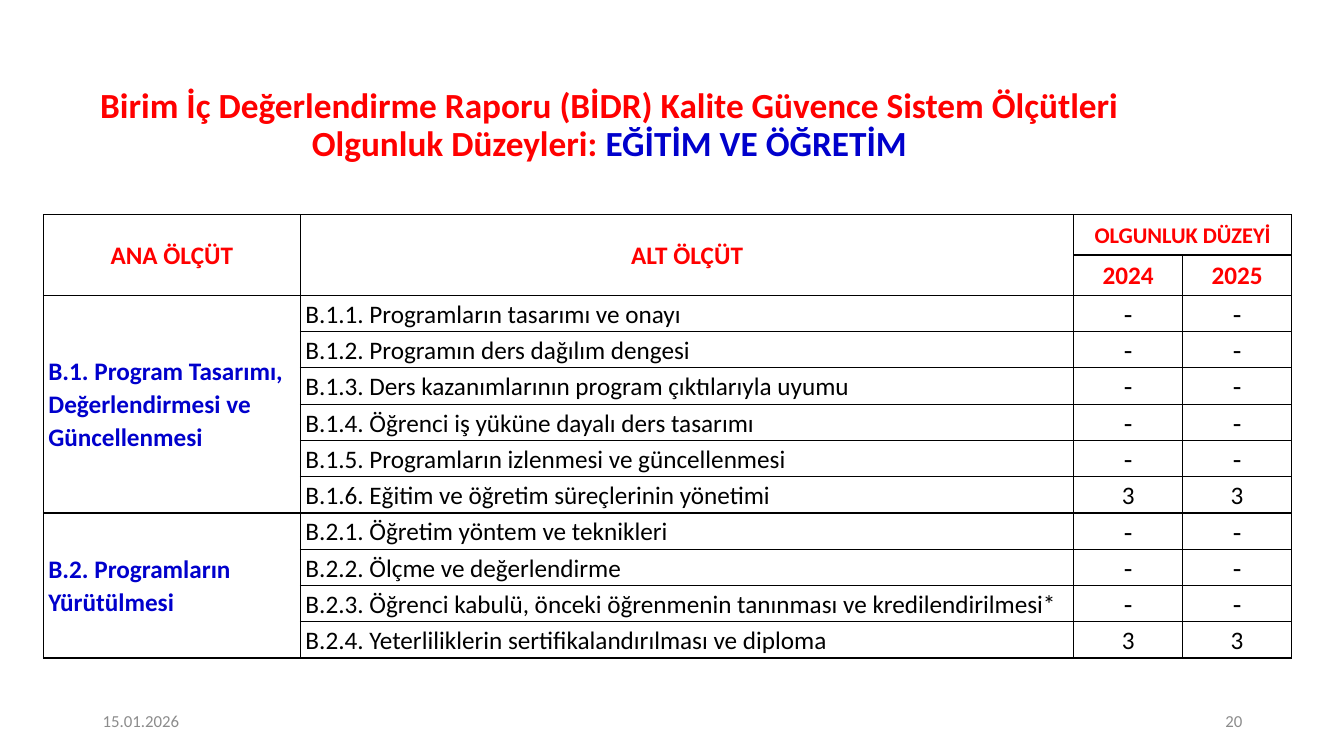
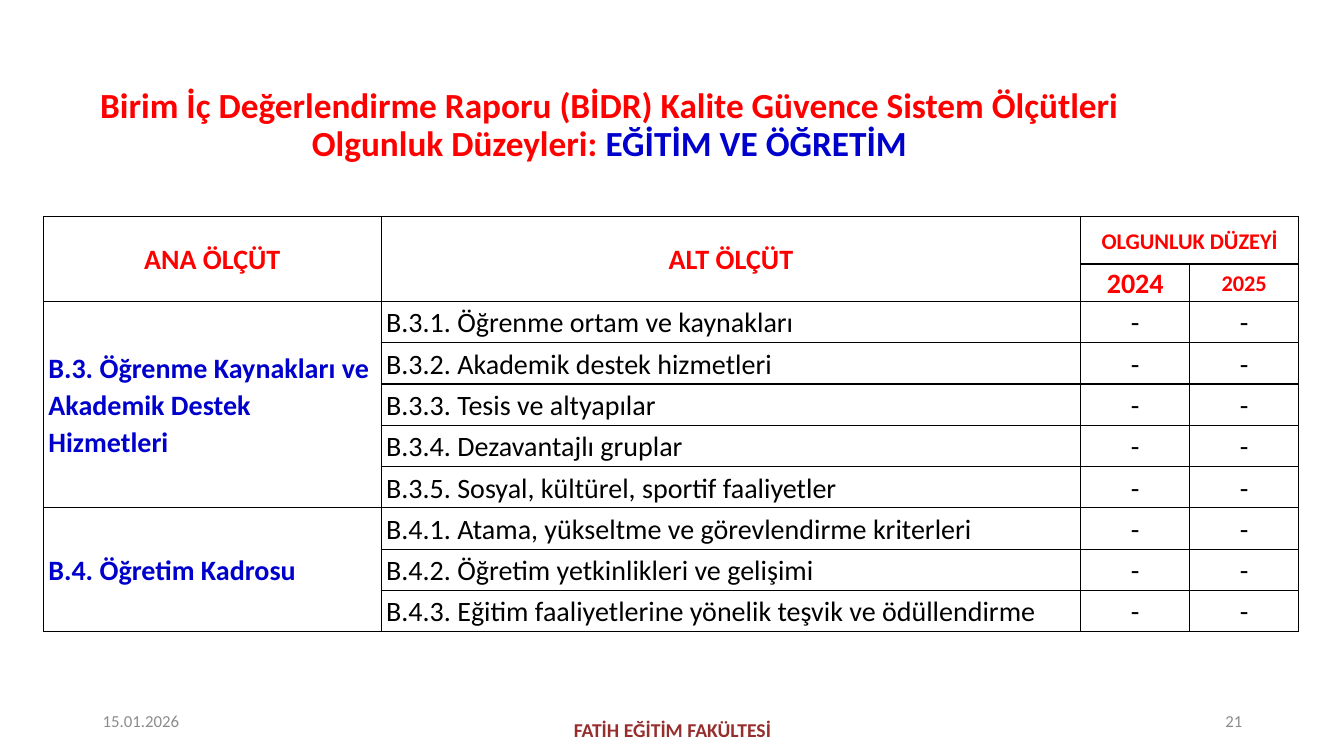
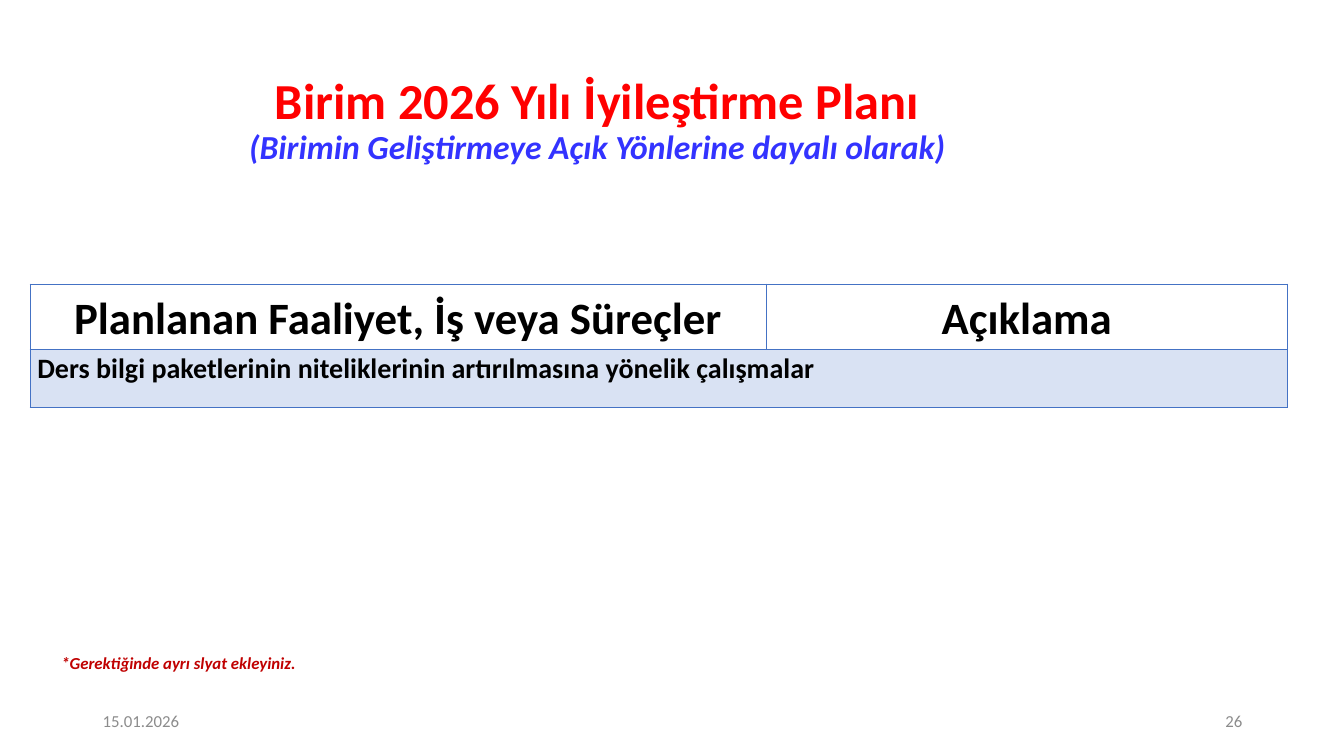
"""Build three slides on faculty quality criteria and the improvement plan."""
import lxml.etree
import pptx
import pptx.dml.color
import pptx.enum.text
import pptx.oxml.ns
import pptx.util

Inches = pptx.util.Inches
RGBColor = pptx.dml.color.RGBColor
ALIGN = pptx.enum.text.PP_ALIGN
ANCHOR = pptx.enum.text.MSO_ANCHOR

FONT = "Calibri"
RED = RGBColor(0xFF, 0x00, 0x00)
BLUE = RGBColor(0x00, 0x00, 0xCC)
SUBTITLE_BLUE = RGBColor(0x33, 0x33, 0xFF)
BLACK = RGBColor(0x00, 0x00, 0x00)
GREY = RGBColor(0x8C, 0x8C, 0x8C)
MAROON = RGBColor(0x96, 0x2E, 0x2E)
NOTE_RED = RGBColor(0xC0, 0x00, 0x00)
PLAN_BORDER = RGBColor(0x44, 0x72, 0xC4)
PLAN_FILL = RGBColor(0xD9, 0xE2, 0xF3)

DATE = "15.01.2026"
FACULTY = "FATİH EĞİTİM FAKÜLTESİ"
NOTE = "*Gerektiğinde ayrı slyat ekleyiniz."
CRITERIA_TITLE = [
    ("Birim İç Değerlendirme Raporu (BİDR) Kalite Güvence Sistem Ölçütleri "
     "Olgunluk Düzeyleri: ", 25.2, RED, False),
    ("EĞİTİM VE ÖĞRETİM", 25.2, BLUE, False),
]
PLAN_TITLE = [
    ("Birim 2026 Yılı İyileştirme Planı\v", 36, RED, False),
    ("(Birimin Geliştirmeye Açık Yönlerine dayalı olarak)", 24, SUBTITLE_BLUE, True),
]
PLAN_HEADERS = ["Planlanan Faaliyet, İş veya Süreçler", "Açıklama"]
PLANNED_WORK = "Ders bilgi paketlerinin niteliklerinin artırılmasına yönelik çalışmalar"

CRITERIA_SLIDES = [
    {
        "number": "20",
        "top": 2.13,
        "columns": [2.55, 7.67, 1.08, 1.08],
        "header_rows": [0.4, 0.4],
        "row": 0.36,
        "size": 18,
        "years": [("2024", 18), ("2025", 18)],
        "faculty": None,
        "groups": [
            ("B.1. Program Tasarımı, Değerlendirmesi ve Güncellenmesi", [
                ("B.1.1. Programların tasarımı ve onayı", "-", "-"),
                ("B.1.2. Programın ders dağılım dengesi", "-", "-"),
                ("B.1.3. Ders kazanımlarının program çıktılarıyla uyumu", "-", "-"),
                ("B.1.4. Öğrenci iş yüküne dayalı ders tasarımı", "-", "-"),
                ("B.1.5. Programların izlenmesi ve güncellenmesi", "-", "-"),
                ("B.1.6. Eğitim ve öğretim süreçlerinin yönetimi", "3", "3"),
            ]),
            ("B.2. Programların Yürütülmesi", [
                ("B.2.1. Öğretim yöntem ve teknikleri", "-", "-"),
                ("B.2.2. Ölçme ve değerlendirme", "-", "-"),
                ("B.2.3. Öğrenci kabulü, önceki öğrenmenin tanınması ve "
                 "kredilendirilmesi*", "-", "-"),
                ("B.2.4. Yeterliliklerin sertifikalandırılması ve diploma", "3", "3"),
            ]),
        ],
    },
    {
        "number": "21",
        "top": 2.15,
        "columns": [3.35, 6.94, 1.08, 1.08],
        "header_rows": [0.47, 0.37],
        "row": 0.41,
        "size": 20,
        "years": [("2024", 20), ("2025", 16)],
        "faculty": FACULTY,
        "groups": [
            ("B.3. Öğrenme Kaynakları ve Akademik Destek Hizmetleri", [
                ("B.3.1. Öğrenme ortam ve kaynakları", "-", "-"),
                ("B.3.2. Akademik destek hizmetleri", "-", "-"),
                ("B.3.3. Tesis ve altyapılar", "-", "-"),
                ("B.3.4. Dezavantajlı gruplar", "-", "-"),
                ("B.3.5. Sosyal, kültürel, sportif faaliyetler", "-", "-"),
            ]),
            ("B.4. Öğretim Kadrosu", [
                ("B.4.1. Atama, yükseltme ve görevlendirme kriterleri", "-", "-"),
                ("B.4.2. Öğretim yetkinlikleri ve gelişimi", "-", "-"),
                ("B.4.3. Eğitim faaliyetlerine yönelik teşvik ve ödüllendirme", "-", "-"),
            ]),
        ],
    },
]


def style_font(font, size, color, bold=False, italic=False):
    """Set the shared typeface with the given size, colour and emphasis."""
    font.name = FONT
    font.size = pptx.util.Pt(size)
    font.color.rgb = color
    font.bold = bold
    font.italic = italic


def add_label(slide, box, text, size, color, align=ALIGN.LEFT, anchor=ANCHOR.MIDDLE,
              bold=False, italic=False):
    """Add one line of text in a wrapping box."""
    frame = slide.shapes.add_textbox(*map(Inches, box)).text_frame
    frame.word_wrap = True
    frame.vertical_anchor = anchor
    frame.text = text
    frame.paragraphs[0].alignment = align
    style_font(frame.paragraphs[0].runs[0].font, size, color, bold, italic)


def add_base_slide(deck, title_box, title_parts, number):
    """Add a slide with its title, date and page number."""
    slide = deck.slides.add_slide(deck.slide_layouts[5])
    title = slide.shapes.title
    title.left, title.top, title.width, title.height = map(Inches, title_box)
    frame = title.text_frame
    frame.word_wrap = True
    frame.auto_size = pptx.enum.text.MSO_AUTO_SIZE.NONE
    frame.vertical_anchor = ANCHOR.MIDDLE
    heading = frame.paragraphs[0]
    heading.text = "".join(part[0] for part in title_parts)
    heading.alignment = ALIGN.CENTER
    heading.line_spacing = 0.9
    if len(heading.runs) < len(title_parts):
        heading.runs[0].text = title_parts[0][0]
        heading.add_run().text = title_parts[1][0]
    for run, (_, size, color, italic) in zip(heading.runs, title_parts):
        style_font(run.font, size, color, True, italic)
    add_label(slide, (0.92, 6.95, 3, 0.4), DATE, 12, GREY)
    add_label(slide, (9.42, 6.95, 3, 0.4), number, 12, GREY, ALIGN.RIGHT)
    return slide


def add_grid(slide, left, top, columns, rows, border):
    """Add an unfilled table with thin borders around every cell."""
    table = slide.shapes.add_table(
        len(rows), len(columns), Inches(left), Inches(top),
        Inches(sum(columns)), Inches(sum(rows))).table
    table.first_row = table.horz_banding = False
    for column, width in zip(table.columns, columns):
        column.width = Inches(width)
    for row, height in zip(table.rows, rows):
        row.height = Inches(height)
    qn = pptx.oxml.ns.qn
    for cell in table.iter_cells():
        properties = cell._tc.get_or_add_tcPr()
        for side in ("a:lnL", "a:lnR", "a:lnT", "a:lnB"):
            line = lxml.etree.SubElement(properties, qn(side), w=str(pptx.util.Pt(1)))
            fill = lxml.etree.SubElement(line, qn("a:solidFill"))
            lxml.etree.SubElement(fill, qn("a:srgbClr"), val=str(border))
        cell.fill.background()
    return table


def fill_cell(cell, text, size, color, align=ALIGN.CENTER, bold=True, inset=0.05,
              anchor=ANCHOR.MIDDLE):
    """Write and format the text of one cell."""
    cell.margin_left = cell.margin_right = Inches(inset)
    cell.margin_top = cell.margin_bottom = 0
    cell.vertical_anchor = anchor
    cell.text = text
    paragraph = cell.text_frame.paragraphs[0]
    paragraph.alignment = align
    paragraph.line_spacing = 1.07
    style_font(paragraph.runs[0].font, size, color, bold)


def add_criteria_slide(deck, content):
    """Add one slide of criteria with their maturity levels."""
    slide = add_base_slide(deck, (0.43, 0.9, 11.23, 0.7), CRITERIA_TITLE, content["number"])
    if content["faculty"]:
        add_label(slide, (4.42, 7.04, 4.5, 0.4), content["faculty"], 14, MAROON,
                  ALIGN.CENTER, bold=True)
    size = content["size"]
    count = sum(len(criteria) for _, criteria in content["groups"])
    table = add_grid(slide, 0.43, content["top"], content["columns"],
                     content["header_rows"] + [content["row"]] * count, BLACK)
    for column, header in enumerate(["ANA ÖLÇÜT", "ALT ÖLÇÜT"]):
        table.cell(0, column).merge(table.cell(1, column))
        fill_cell(table.cell(0, column), header, size, RED)
    table.cell(0, 2).merge(table.cell(0, 3))
    fill_cell(table.cell(0, 2), "OLGUNLUK DÜZEYİ", 16, RED)
    for column, (year, year_size) in enumerate(content["years"], 2):
        fill_cell(table.cell(1, column), year, year_size, RED)
    row = 2
    for group, criteria in content["groups"]:
        table.cell(row, 0).merge(table.cell(row + len(criteria) - 1, 0))
        fill_cell(table.cell(row, 0), group, size, BLUE, ALIGN.LEFT)
        for criterion, *levels in criteria:
            fill_cell(table.cell(row, 1), criterion, size, BLACK, ALIGN.JUSTIFY, False)
            for column, level in enumerate(levels, 2):
                level_size = 20 if level == "-" else size
                fill_cell(table.cell(row, column), level, level_size, BLACK, bold=False)
            row += 1


def add_plan_slide(deck):
    """Add the improvement plan slide."""
    slide = add_base_slide(deck, (0.3, 0.78, 11.25, 0.84), PLAN_TITLE, "26")
    table = add_grid(slide, 0.3, 2.82, [7.3, 5.17], [0.65, 0.57], PLAN_BORDER)
    for column, header in enumerate(PLAN_HEADERS):
        fill_cell(table.cell(0, column), header, 32, BLACK, inset=0.07)
    work = table.cell(1, 0)
    work.merge(table.cell(1, 1))
    fill_cell(work, PLANNED_WORK, 20, BLACK, ALIGN.LEFT, inset=0.07, anchor=ANCHOR.TOP)
    work.fill.solid()
    work.fill.fore_color.rgb = PLAN_FILL
    add_label(slide, (0.51, 6.43, 5, 0.3), NOTE, 12, NOTE_RED, anchor=ANCHOR.TOP,
              bold=True, italic=True)


def main():
    """Build and save the deck."""
    deck = pptx.Presentation()
    deck.slide_width, deck.slide_height = Inches(13.33), Inches(7.5)
    for content in CRITERIA_SLIDES:
        add_criteria_slide(deck, content)
    add_plan_slide(deck)
    deck.save("out.pptx")


if __name__ == "__main__":
    main()
